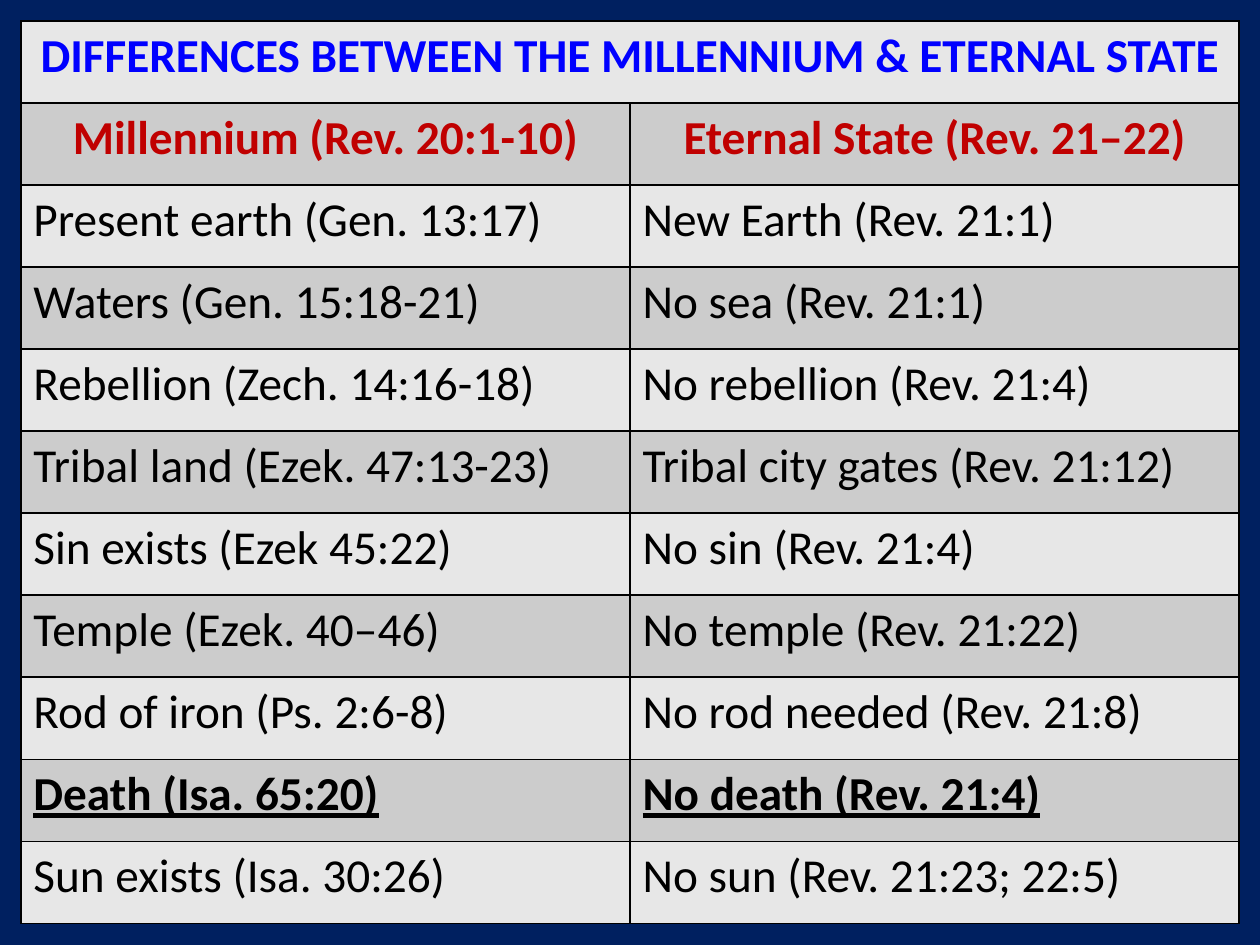
from lxml.etree import SubElement
from pptx import Presentation
from pptx.dml.color import RGBColor
from pptx.enum.text import PP_ALIGN as Align
from pptx.oxml.ns import qn
from pptx.util import Cm, Pt

NAVY = RGBColor(0x00, 0x20, 0x60)
BLUE = RGBColor(0x00, 0x00, 0xFF)
RED = RGBColor(0xC0, 0x00, 0x00)
BLACK = RGBColor(0x00, 0x00, 0x00)
LIGHT = RGBColor(0xE7, 0xE7, 0xE7)
GREY = RGBColor(0xCC, 0xCC, 0xCC)

TITLE = "DIFFERENCES BETWEEN THE MILLENNIUM & ETERNAL STATE"
HEADINGS = ("Millennium (Rev. 20:1-10)", "Eternal State (Rev. 21‒22)")
CONTRASTS = [
    ("Present earth (Gen. 13:17)", "New Earth (Rev. 21:1)"),
    ("Waters (Gen. 15:18-21)", "No sea (Rev. 21:1)"),
    ("Rebellion (Zech. 14:16-18)", "No rebellion (Rev. 21:4)"),
    ("Tribal land (Ezek. 47:13-23)", "Tribal city gates (Rev. 21:12)"),
    ("Sin exists (Ezek 45:22)", "No sin (Rev. 21:4)"),
    ("Temple (Ezek. 40‒46)", "No temple (Rev. 21:22)"),
    ("Rod of iron (Ps. 2:6-8)", "No rod needed (Rev. 21:8)"),
    ("Death (Isa. 65:20)", "No death (Rev. 21:4)"),
    ("Sun exists (Isa. 30:26)", "No sun (Rev. 21:23; 22:5)"),
]
EMPHASIZED = "Death (Isa. 65:20)"

MARGIN = Cm(0.42)
TABLE_WIDTH, TABLE_HEIGHT = Cm(24.56), Cm(18.2)


def set_borders(cell):
    """Draw a thin black line on all four sides; borders precede the fill."""
    tc_pr = cell._tc.get_or_add_tcPr()
    for i, side in enumerate(("a:lnL", "a:lnR", "a:lnT", "a:lnB")):
        ln = SubElement(tc_pr, qn(side), w=str(Pt(1)))
        fill = SubElement(ln, qn("a:solidFill"))
        SubElement(fill, qn("a:srgbClr"), val=str(BLACK))
        tc_pr.insert(i, ln)


def style_cell(cell, fill):
    set_borders(cell)
    cell.fill.solid()
    cell.fill.fore_color.rgb = fill


def write_cell(cell, text, color=BLACK, align=Align.LEFT, bold=False, underline=False):
    p = cell.text_frame.paragraphs[0]
    p.text = text
    p.alignment = align
    p.space_before = p.space_after = Pt(12)
    font = p.runs[0].font
    font.name, font.size = "Calibri", Pt(27)
    font.bold, font.underline = bold, underline
    font.color.rgb = color


def add_comparison(s):
    n_rows = len(CONTRASTS) + 2
    table = s.shapes.add_table(n_rows, 2, MARGIN, MARGIN, TABLE_WIDTH, TABLE_HEIGHT).table

    # Alternating row fills
    for i, row in enumerate(table.rows):
        for cell in row.cells:
            style_cell(cell, GREY if i % 2 else LIGHT)

    # Title across both columns
    table.cell(0, 0).merge(table.cell(0, 1))
    write_cell(table.cell(0, 0), TITLE, BLUE, Align.CENTER, bold=True)

    # Column headings
    for col, heading in enumerate(HEADINGS):
        write_cell(table.cell(1, col), heading, RED, Align.CENTER, bold=True)

    # Contrasts
    for i, pair in enumerate(CONTRASTS, start=2):
        strong = pair[0] == EMPHASIZED
        for col, text in enumerate(pair):
            write_cell(table.cell(i, col), text, bold=strong, underline=strong)


def main():
    prs = Presentation()
    prs.slide_width, prs.slide_height = Cm(25.4), Cm(19.05)
    s = prs.slides.add_slide(prs.slide_layouts[6])
    s.background.fill.solid()
    s.background.fill.fore_color.rgb = NAVY
    add_comparison(s)
    prs.save("out.pptx")


if __name__ == "__main__":
    main()
